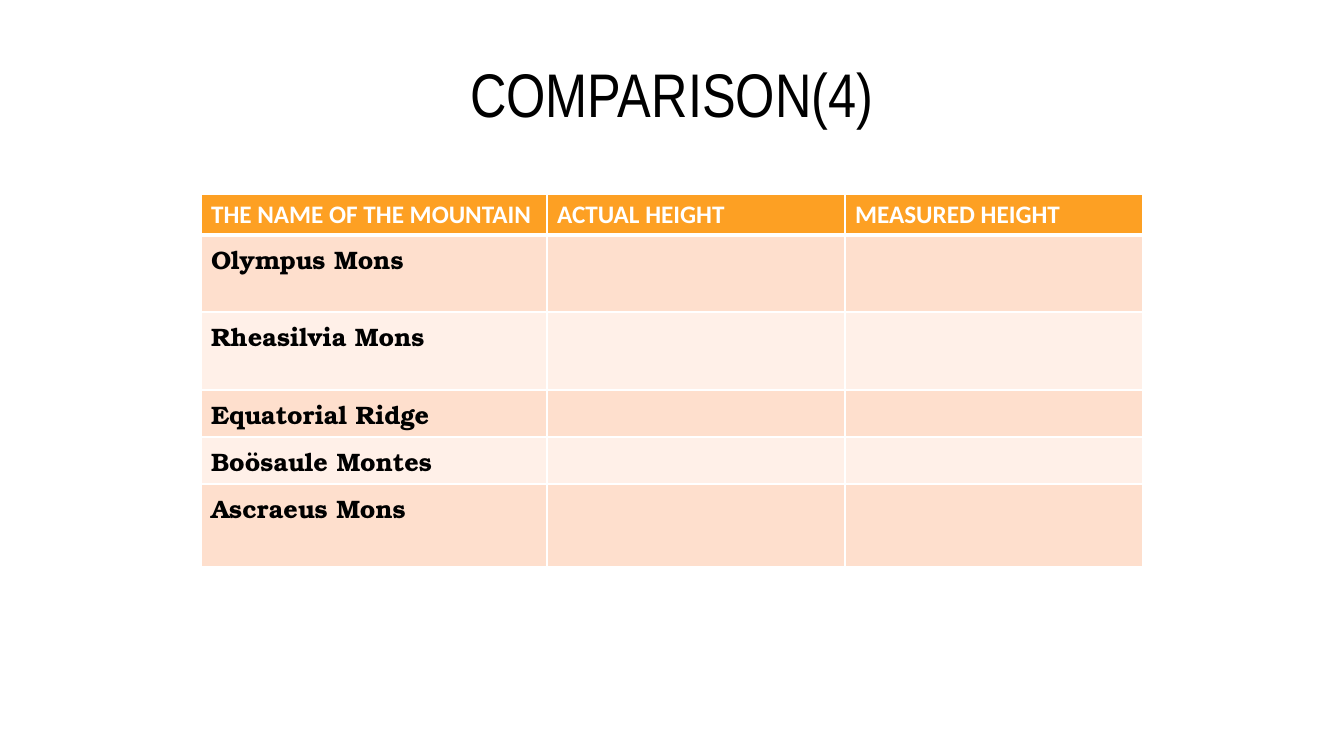
import pptx
import pptx.dml.color
import pptx.enum.text
import pptx.oxml
import pptx.oxml.ns
import pptx.util

HEADERS = ["THE NAME OF THE MOUNTAIN", "ACTUAL HEIGHT", "MEASURED HEIGHT"]
MOUNTAINS = ["Olympus Mons", "Rheasilvia Mons", "Equatorial Ridge",
             "Boösaule Montes", "Ascraeus Mons"]
COL_WIDTHS = [346, 298, 298]
ROW_HEIGHTS = [41, 77, 78, 47, 47, 83]
ORANGE, PEACH, CREAM = "FDA023", "FEDFCD", "FFF0E8"
WHITE, BLACK = "FFFFFF", "000000"


def px(n):
    """Turn pixels into EMU."""
    return pptx.util.Emu(round(n * 914400 / 100.8))


def rgb(code):
    """Turn a hex string into a colour."""
    return pptx.dml.color.RGBColor.from_string(code)


def add_run(p, text, font, size, color, bold=False):
    """Add one formatted run to a paragraph."""
    r = p.add_run()
    r.text = text
    r.font.name = font
    r.font.size = pptx.util.Pt(size)
    r.font.bold = bold
    r.font.color.rgb = rgb(color)


def set_borders(cell, bottom=1, top=1):
    """Give a cell white borders with widths in points."""
    tc_pr = cell._tc.get_or_add_tcPr()
    widths = {"lnL": 1, "lnR": 1, "lnT": top, "lnB": bottom}
    for i, (tag, width) in enumerate(widths.items()):
        tc_pr.insert(i, pptx.oxml.parse_xml(
            f'<a:{tag} {pptx.oxml.ns.nsdecls("a")} w="{pptx.util.Pt(width)}">'
            f'<a:solidFill><a:srgbClr val="{WHITE}"/></a:solidFill></a:{tag}>'))


def add_title(slide, text, x, y, w, h):
    """Place and format the slide title."""
    sp = slide.shapes.title
    sp.left, sp.top, sp.width, sp.height = px(x), px(y), px(w), px(h)
    tf = sp.text_frame
    tf.vertical_anchor = pptx.enum.text.MSO_ANCHOR.MIDDLE
    p = tf.paragraphs[0]
    p.alignment = pptx.enum.text.PP_ALIGN.CENTER
    add_run(p, text, "Arial Narrow", 44, BLACK)


def add_mountain_table(slide, x, y):
    """Add the table that compares mountain heights."""
    rows = [HEADERS] + [[name, "", ""] for name in MOUNTAINS]
    table = slide.shapes.add_table(
        len(rows), len(HEADERS), px(x), px(y),
        px(sum(COL_WIDTHS)), px(sum(ROW_HEIGHTS))).table
    for col, width in zip(table.columns, COL_WIDTHS):
        col.width = px(width)
    for i, (row, height, texts) in enumerate(zip(table.rows, ROW_HEIGHTS, rows)):
        row.height = px(height)
        fill = ORANGE if i == 0 else PEACH if i % 2 else CREAM
        font, color = ("Calibri", WHITE) if i == 0 else ("TeX Gyre Bonum", BLACK)
        for cell, text in zip(row.cells, texts):
            cell.fill.solid()
            cell.fill.fore_color.rgb = rgb(fill)
            set_borders(cell, bottom=3 if i == 0 else 1, top=3 if i == 1 else 1)
            if text:
                add_run(cell.text_frame.paragraphs[0], text, font, 18, color, True)


def main():
    """Build the slide and save it."""
    prs = pptx.Presentation()
    prs.slide_width, prs.slide_height = px(1344), px(756)
    slide = prs.slides.add_slide(prs.slide_layouts[5])
    add_title(slide, "COMPARISON(4)", 67, 30, 1210, 126)
    add_mountain_table(slide, 201, 194)
    prs.save("out.pptx")


if __name__ == "__main__":
    main()
